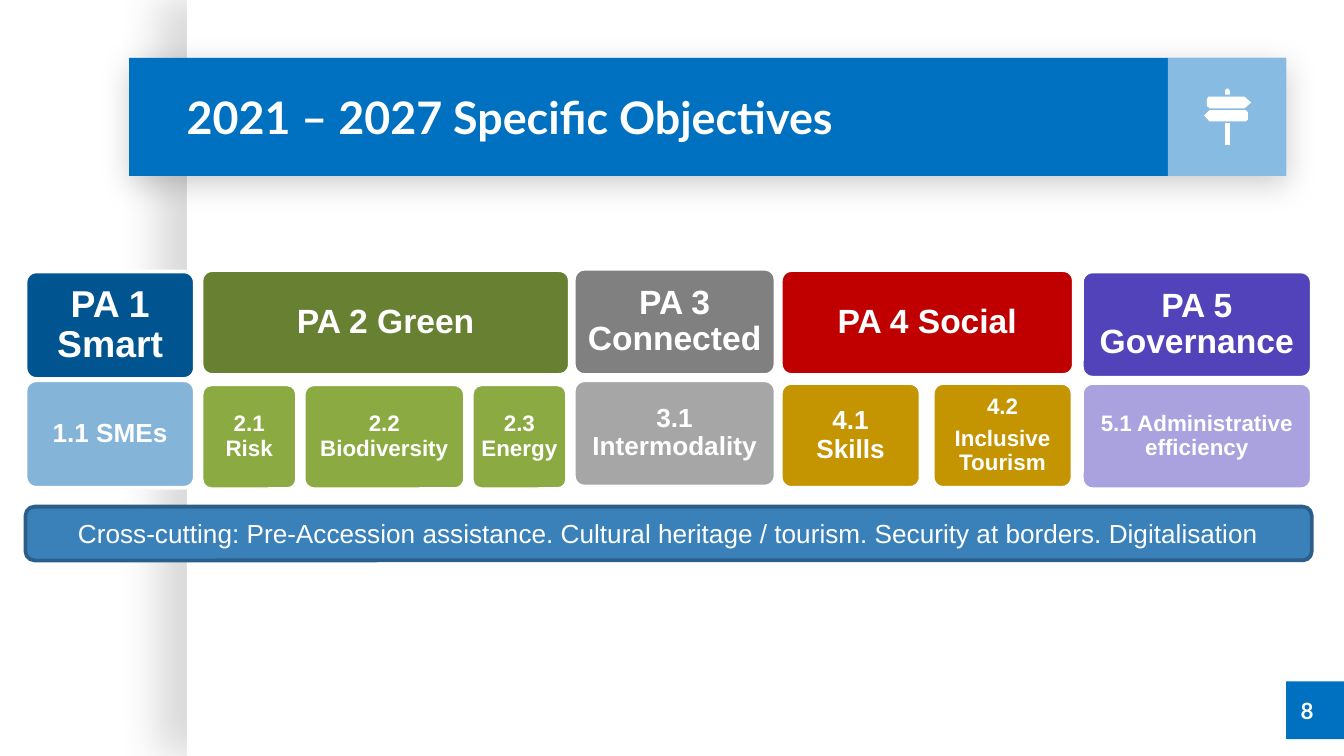
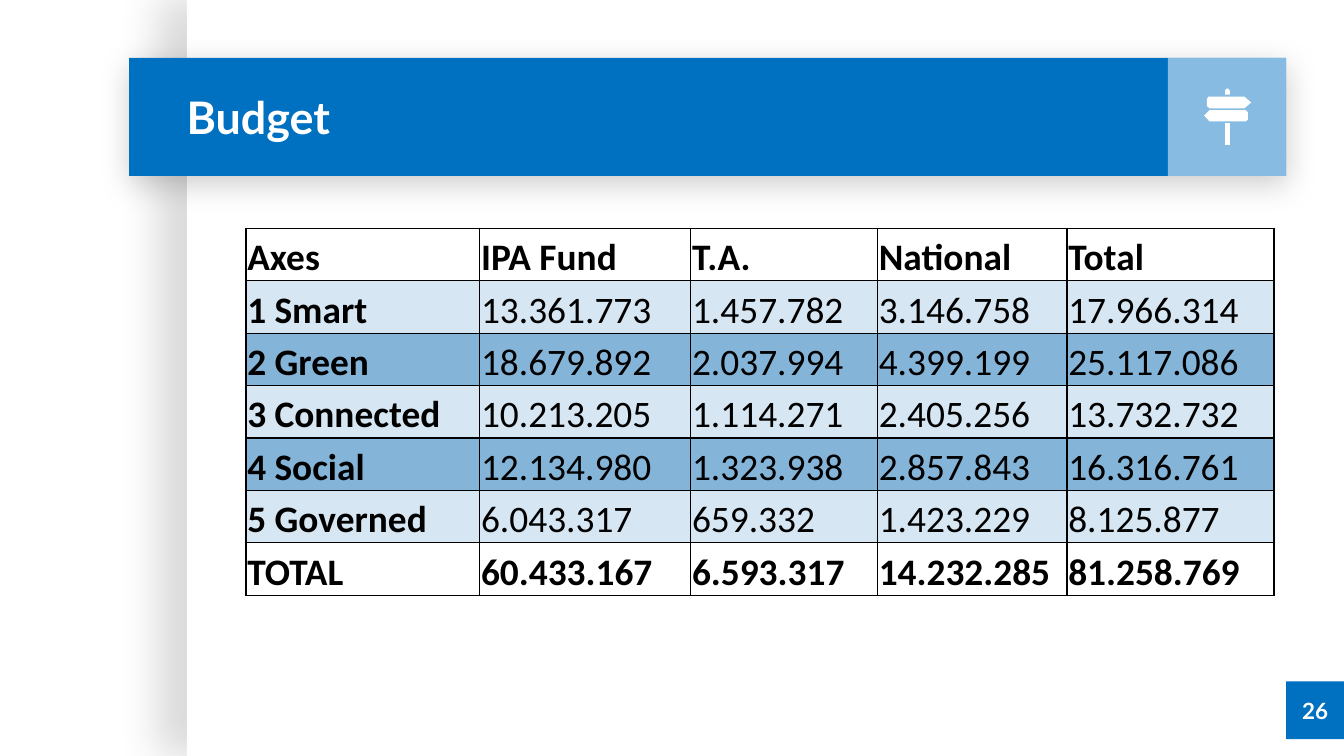
"""Build the specific objectives and budget slides of a programme presentation."""
from dataclasses import dataclass
from typing import Any, Optional

import lxml.etree
import pptx
import pptx.dml.color
import pptx.enum.shapes
import pptx.enum.text
import pptx.oxml.ns
import pptx.util

RGBColor = pptx.dml.color.RGBColor
WHITE = RGBColor(0xFF, 0xFF, 0xFF)
BLACK = RGBColor(0x00, 0x00, 0x00)
BAND_BLUE = RGBColor(0x00, 0x70, 0xC0)
BAR_BLUE = RGBColor(0x3A, 0x81, 0xBA)
BAR_EDGE = RGBColor(0x2B, 0x5F, 0x8A)
NAVY = RGBColor(0x00, 0x54, 0x90)
SKY = RGBColor(0x85, 0xB4, 0xD9)
PALE_SKY = RGBColor(0xD6, 0xE6, 0xF2)
OLIVE = RGBColor(0x68, 0x80, 0x31)
LEAF = RGBColor(0x8B, 0xAB, 0x42)
GRAY = RGBColor(0x80, 0x80, 0x80)
SILVER = RGBColor(0xA6, 0xA6, 0xA6)
RED = RGBColor(0xC0, 0x00, 0x00)
GOLD = RGBColor(0xC4, 0x95, 0x00)
VIOLET = RGBColor(0x52, 0x43, 0xBB)
LILAC = RGBColor(0xA9, 0xA2, 0xDE)

COLUMNS, ROWS = 100, 56.25
UNIT = pptx.util.Inches(0.1)
ALIGN = pptx.enum.text.PP_ALIGN
ANCHOR = pptx.enum.text.MSO_ANCHOR
PRESET = pptx.enum.shapes.MSO_SHAPE
qn = pptx.oxml.ns.qn


@dataclass(frozen=True)
class Box:
    """A place on the grid, in columns and rows."""
    column: float
    row: float
    width: float
    height: float

    def lengths(self) -> list[int]:
        return [grid(value) for value in (self.column, self.row, self.width, self.height)]


@dataclass(frozen=True)
class Shadow:
    """An outer shadow: opacity in percent, blur and distance in points."""
    opacity: int
    blur: float
    distance: float
    angle: int


@dataclass(frozen=True)
class TextStyle:
    """How the text of one box looks."""
    font: str
    size: int
    bold: bool = True
    color: RGBColor = WHITE
    align: Any = ALIGN.CENTER
    line_spacing: Optional[float] = None
    space_after: float = 0


@dataclass(frozen=True)
class Objective:
    """One specific objective; a line break inside a paragraph is a newline."""
    paragraphs: tuple[str, ...]
    width: float
    size: int


@dataclass(frozen=True)
class Axis:
    """A priority axis with its row of objectives."""
    heading: str
    size: int
    box: Box
    objective_row: float
    color: RGBColor
    objective_color: RGBColor
    objectives: tuple[Objective, ...]
    gap: float = 0


PANEL = Box(13.9, 0, 86.1, ROWS)
BAND = Box(9.6, 4.3, 86.1, 8.8)
ICON_TILE = Box(86.9, 4.3, 8.8, 8.8)
TITLE = Box(12.9, 4.3, 73.7, 8.8)
NUMBER_TILE = Box(95.7, 50.7, 4.3, 4.3)
CROSS_CUTTING = Box(1.9, 37.7, 95.7, 4)
TITLE_STYLE = TextStyle("Lato", 24, align=ALIGN.LEFT)
NUMBER_STYLE = TextStyle("Lato", 12)
SIGNPOST = (
    ((89.9, 7.2), (89.8, 7.4), (89.8, 7.9), (90, 8.06), (92.6, 8.06), (93.1, 7.63), (92.6, 7.2)),
    ((90, 8.2), (89.6, 8.6), (90, 9.03), (92.7, 9.03), (92.85, 8.9), (92.85, 8.35), (92.7, 8.2)),
    ((91.25, 6.6), (91.15, 6.75), (91.15, 7.05), (91.5, 7.05), (91.5, 6.75), (91.4, 6.6)),
    ((91.15, 9.17), (91.15, 10.8), (91.5, 10.8), (91.5, 9.17)),
)
AXES = (
    Axis("PA 1 Smart", 20, Box(1.9, 20.2, 12.6, 8), 28.3, NAVY, SKY,
         (Objective(("1.1 SMEs",), 12.6, 14),)),
    Axis("PA 2 Green", 18, Box(15, 20.1, 27.4, 7.8), 28.6, OLIVE, LEAF,
         (Objective(("2.1 Risk",), 7.1, 12),
          Objective(("2.2 Biodiversity",), 12, 12),
          Objective(("2.3 Energy",), 7.1, 12)), 0.5),
    Axis("PA 3 Connected", 18, Box(42.7, 20, 15, 7.9), 28.3, GRAY, SILVER,
         (Objective(("3.1 Intermodality",), 15, 14),)),
    Axis("PA 4 Social", 18, Box(58.1, 20.1, 21.8, 7.8), 28.5, RED, GOLD,
         (Objective(("4.1\nSkills",), 10.4, 14),
          Objective(("4.2", "Inclusive Tourism"), 10.4, 12)), 0.9),
    Axis("PA 5 Governance", 18, Box(80.5, 20.2, 17.1, 7.9), 28.5, VIOLET, LILAC,
         (Objective(("5.1 Administrative efficiency",), 17.1, 12),)),
)
BUDGET_BOX = Box(18.3, 17, 76.4, 27.3)
BUDGET_COLUMNS = (17.4, 15.7, 13.9, 14.1, 15.4)
BUDGET = (
    ("Axes", "IPA Fund", "T.A.", "National", "Total"),
    ("1 Smart", "13.361.773", "1.457.782", "3.146.758", "17.966.314"),
    ("2 Green", "18.679.892", "2.037.994", "4.399.199", "25.117.086"),
    ("3 Connected", "10.213.205", "1.114.271", "2.405.256", "13.732.732"),
    ("4 Social", "12.134.980", "1.323.938", "2.857.843", "16.316.761"),
    ("5 Governed", "6.043.317", "659.332", "1.423.229", "8.125.877"),
    ("TOTAL", "60.433.167", "6.593.317", "14.232.285", "81.258.769"),
)


def grid(units: float) -> int:
    return round(units * UNIT)


def set_margins(target: Any, left: float, top: float, right: float, bottom: float) -> None:
    target.margin_left, target.margin_top = grid(left), grid(top)
    target.margin_right, target.margin_bottom = grid(right), grid(bottom)


def write_text(frame: Any, paragraphs: tuple[str, ...], style: TextStyle) -> None:
    for index, text in enumerate(paragraphs):
        paragraph = frame.add_paragraph() if index else frame.paragraphs[0]
        paragraph.alignment = style.align
        if style.line_spacing:
            paragraph.line_spacing = style.line_spacing
        if style.space_after:
            paragraph.space_after = pptx.util.Pt(style.space_after)
        for position, line in enumerate(text.split("\n")):
            if position:
                paragraph.add_line_break()
            run = paragraph.add_run()
            run.text = line
            run.font.name = style.font
            run.font.size = pptx.util.Pt(style.size)
            run.font.bold = style.bold
            run.font.color.rgb = style.color


def add_shadow(shape: Any, shadow: Shadow) -> None:
    effects = shape.element.spPr.find(qn("a:effectLst"))
    outer = lxml.etree.SubElement(
        effects, qn("a:outerShdw"), blurRad=str(pptx.util.Pt(shadow.blur)),
        dist=str(pptx.util.Pt(shadow.distance)), dir=str(shadow.angle * 60000),
        algn="ctr", rotWithShape="0")
    color = lxml.etree.SubElement(outer, qn("a:srgbClr"), val=str(BLACK))
    lxml.etree.SubElement(color, qn("a:alpha"), val=str(shadow.opacity * 1000))


def add_panel(slide: Any, box: Box, color: RGBColor, preset: Any = PRESET.RECTANGLE,
              edge: Optional[RGBColor] = None, shadow: Optional[Shadow] = None) -> Any:
    shape = slide.shapes.add_shape(preset, *box.lengths())
    shape.shadow.inherit = False
    shape.fill.solid()
    shape.fill.fore_color.rgb = color
    if edge is None:
        shape.line.fill.background()
    else:
        shape.line.color.rgb = edge
        shape.line.width = pptx.util.Pt(2)
    if shadow:
        add_shadow(shape, shadow)
    return shape


def add_label(slide: Any, box: Box, text: str, style: TextStyle) -> None:
    frame = slide.shapes.add_textbox(*box.lengths()).text_frame
    frame.word_wrap = True
    frame.vertical_anchor = ANCHOR.MIDDLE
    set_margins(frame, 1, 1, 1, 1)
    write_text(frame, (text,), style)


def add_signpost(slide: Any) -> None:
    group = slide.shapes.add_group_shape()
    for outline in SIGNPOST:
        points = [(grid(column), grid(row)) for column, row in outline]
        builder = group.shapes.build_freeform(*points[0])
        builder.add_line_segments(points[1:], close=True)
        shape = builder.convert_to_shape()
        shape.shadow.inherit = False
        shape.fill.solid()
        shape.fill.fore_color.rgb = WHITE
        shape.line.fill.background()


def add_frame_slide(presentation: Any, title: str, number: str, number_box: Box) -> Any:
    slide = presentation.slides.add_slide(presentation.slide_layouts[6])
    add_panel(slide, PANEL, WHITE, shadow=Shadow(15, 22.5, 15, 180))
    add_panel(slide, NUMBER_TILE, BAND_BLUE)
    add_panel(slide, BAND, BAND_BLUE, shadow=Shadow(20, 16.9, 3.8, 90))
    icon_tile = add_panel(slide, ICON_TILE, WHITE)
    color = icon_tile.element.spPr.find(qn("a:solidFill"))[0]
    lxml.etree.SubElement(color, qn("a:alpha"), val="53000")
    add_label(slide, TITLE, title, TITLE_STYLE)
    add_label(slide, number_box, number, NUMBER_STYLE)
    add_signpost(slide)
    return slide


def add_tile(slide: Any, box: Box, color: RGBColor, paragraphs: tuple[str, ...],
             size: int) -> None:
    shape = add_panel(slide, box, color, PRESET.ROUNDED_RECTANGLE, WHITE)
    shape.adjustments[0] = 0.1
    frame = shape.text_frame
    frame.word_wrap = True
    frame.vertical_anchor = ANCHOR.MIDDLE
    inset = size * 0.04
    set_margins(frame, inset, inset, inset, inset)
    style = TextStyle("Arial", size, line_spacing=0.9, space_after=size * 0.35)
    write_text(frame, paragraphs, style)


def add_axis(slide: Any, axis: Axis) -> None:
    add_tile(slide, axis.box, axis.color, (axis.heading,), axis.size)
    column = axis.box.column
    for objective in axis.objectives:
        box = Box(column, axis.objective_row, objective.width, axis.box.height)
        add_tile(slide, box, axis.objective_color, objective.paragraphs, objective.size)
        column += objective.width + axis.gap


def add_cell_borders(cell: Any) -> None:
    properties = cell._tc.get_or_add_tcPr()
    for index, side in enumerate(("lnL", "lnR", "lnT", "lnB")):
        line = lxml.etree.Element(qn(f"a:{side}"), w=str(pptx.util.Pt(0.75)))
        fill = lxml.etree.SubElement(line, qn("a:solidFill"))
        lxml.etree.SubElement(fill, qn("a:srgbClr"), val=str(BLACK))
        properties.insert(index, line)


def add_budget_table(slide: Any) -> None:
    last = len(BUDGET) - 1
    table = slide.shapes.add_table(
        len(BUDGET), len(BUDGET_COLUMNS), *BUDGET_BOX.lengths()).table
    table.first_row = table.horz_banding = False
    for column, width in zip(table.columns, BUDGET_COLUMNS):
        column.width = grid(width)
    for row_index, values in enumerate(BUDGET):
        outer_row = row_index in (0, last)
        color = WHITE if outer_row else PALE_SKY if row_index % 2 else SKY
        for column_index, value in enumerate(values):
            cell = table.cell(row_index, column_index)
            cell.fill.solid()
            cell.fill.fore_color.rgb = color
            cell.vertical_anchor = ANCHOR.BOTTOM
            set_margins(cell, 0.1, 0.1, 0.1, 0)
            bold = outer_row or column_index == 0
            write_text(cell.text_frame, (value,),
                       TextStyle("Calibri", 20, bold, BLACK, ALIGN.LEFT))
            add_cell_borders(cell)


def build_objectives_slide(presentation: Any) -> None:
    slide = add_frame_slide(presentation, "2021 – 2027 Specific Objectives", "8",
                            Box(95.2, 50.7, 4.1, 4.4))
    for axis in AXES:
        add_axis(slide, axis)
    bar = add_panel(slide, CROSS_CUTTING, BAR_BLUE, PRESET.ROUNDED_RECTANGLE, BAR_EDGE)
    bar.text_frame.word_wrap = True
    bar.text_frame.vertical_anchor = ANCHOR.MIDDLE
    write_text(bar.text_frame, (
        "Cross-cutting: Pre-Accession assistance. Cultural heritage / tourism. "
        "Security at borders. Digitalisation",), TextStyle("Arial", 14, bold=False))


def main() -> None:
    presentation = pptx.Presentation()
    presentation.slide_width = grid(COLUMNS)
    presentation.slide_height = grid(ROWS)
    build_objectives_slide(presentation)
    add_budget_table(add_frame_slide(presentation, "Budget", "26", NUMBER_TILE))
    presentation.save("out.pptx")


if __name__ == "__main__":
    main()
